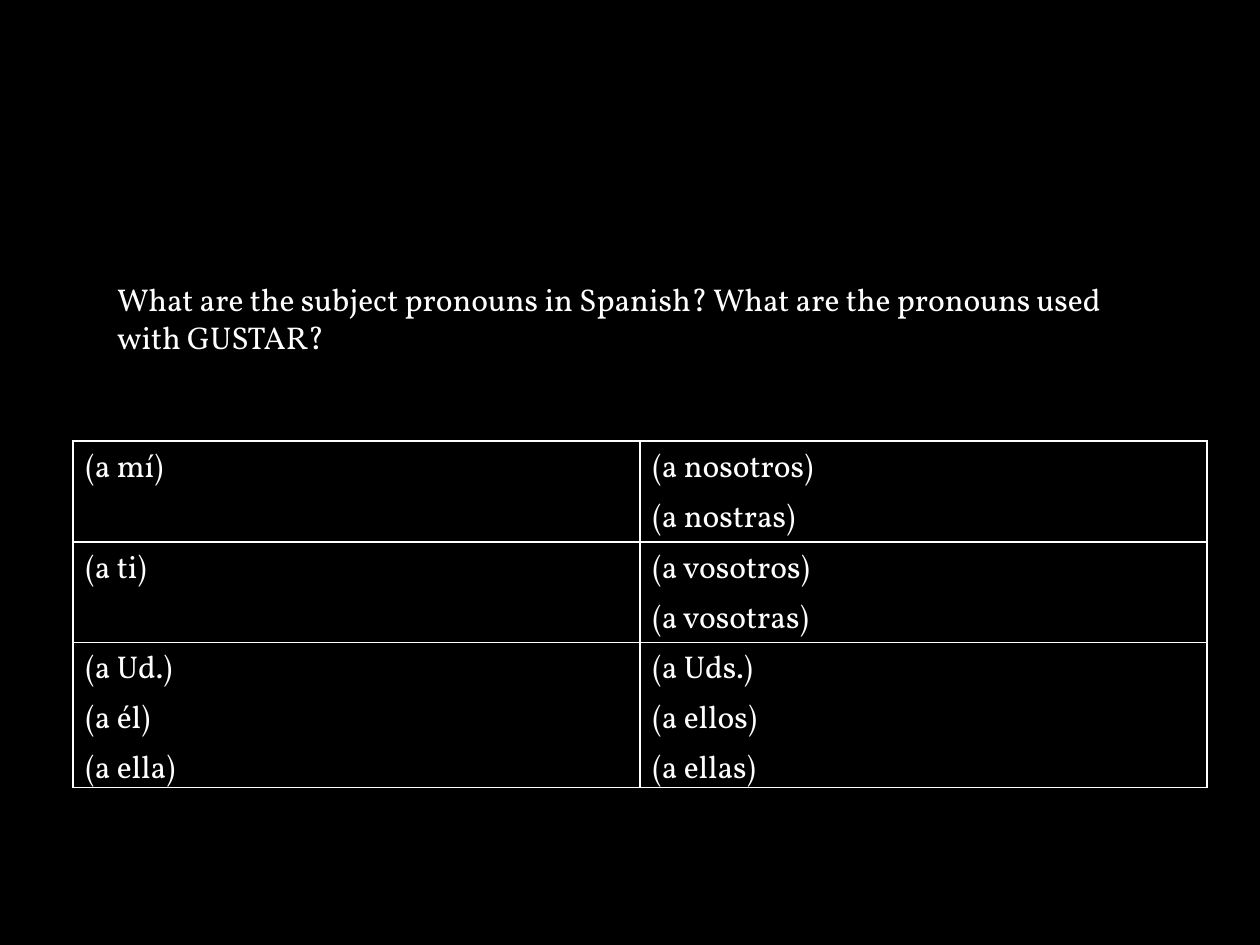
import pptx
import pptx.util
import pptx.dml.color
import pptx.enum.text
import pptx.oxml
import pptx.oxml.ns
from lxml import etree

Inches = pptx.util.Inches
Pt = pptx.util.Pt
COLORS = {"background": "000000", "text": "FFFFFF", "border": "FFFFFF"}
QUESTION = ("What are the subject pronouns in Spanish? "
            "What are the pronouns used with GUSTAR?")
PRONOUNS = [
    [["(a mí)"], ["(a nosotros)", "(a nostras)"]],
    [["(a ti)"], ["(a vosotros)", "(a vosotras)"]],
    [["(a Ud.)", "(a él)", "(a ella)"], ["(a Uds.)", "(a ellos)", "(a ellas)"]],
]


def rgb(name):
    return pptx.dml.color.RGBColor.from_string(COLORS[name])


def write(tf, lines, font="Vollkorn", size=18, color="text", after=0):
    """Fill a text frame with one paragraph per line."""
    for i, line in enumerate(lines):
        p = tf.paragraphs[0] if i == 0 else tf.add_paragraph()
        p.alignment = pptx.enum.text.PP_ALIGN.LEFT
        p.line_spacing = 1.0
        p.space_before = Pt(0)
        p.space_after = Pt(after)
        r = p.add_run()
        r.text = line
        r.font.name = font
        r.font.size = Pt(size)
        r.font.color.rgb = rgb(color)


class Deck:
    def __init__(self, prs):
        self.prs = prs
        self.s = None

    def slide(self):
        self.s = self.prs.slides.add_slide(self.prs.slide_layouts[5])
        fill = self.s.background.fill
        fill.solid()
        fill.fore_color.rgb = rgb("background")

    def title(self, text, x, y, w, h):
        sp = self.s.shapes.title
        sp.left, sp.top, sp.width, sp.height = map(Inches, (x, y, w, h))
        tf = sp.text_frame
        tf.word_wrap = True
        tf.auto_size = pptx.enum.text.MSO_AUTO_SIZE.SHAPE_TO_FIT_TEXT
        tf.vertical_anchor = pptx.enum.text.MSO_ANCHOR.TOP
        write(tf, [text])

    def table(self, rows, x, y, w, heights):
        frame = self.s.shapes.add_table(len(rows), len(rows[0]), Inches(x), Inches(y),
                                        Inches(w), Inches(sum(heights)))
        table = frame.table
        table.first_row = table.horz_banding = False
        for row, height, texts in zip(table.rows, heights, rows):
            row.height = Inches(height)
            for cell, lines in zip(row.cells, texts):
                write(cell.text_frame, lines, after=3.5)
                self.borders(cell)
                cell.fill.solid()
                cell.fill.fore_color.rgb = rgb("background")

    def borders(self, cell, width=1):
        qn = pptx.oxml.ns.qn
        props = cell._tc.get_or_add_tcPr()
        for side in ("lnL", "lnR", "lnT", "lnB"):
            ln = etree.SubElement(props, qn("a:" + side), w=str(Pt(width)))
            fill = etree.SubElement(ln, qn("a:solidFill"))
            etree.SubElement(fill, qn("a:srgbClr"), val=COLORS["border"])


def main():
    prs = pptx.Presentation()
    prs.slide_width, prs.slide_height = Inches(10), Inches(7.5)
    deck = Deck(prs)
    deck.slide()
    # Question above the table
    deck.title(QUESTION, 0.83, 2.17, 8.42, 0.71)
    # Singular pronouns on the left, plural on the right
    deck.table(PRONOUNS, 0.58, 3.5, 9, [0.8, 0.8, 1.15])
    prs.save("out.pptx")


if __name__ == "__main__":
    main()
